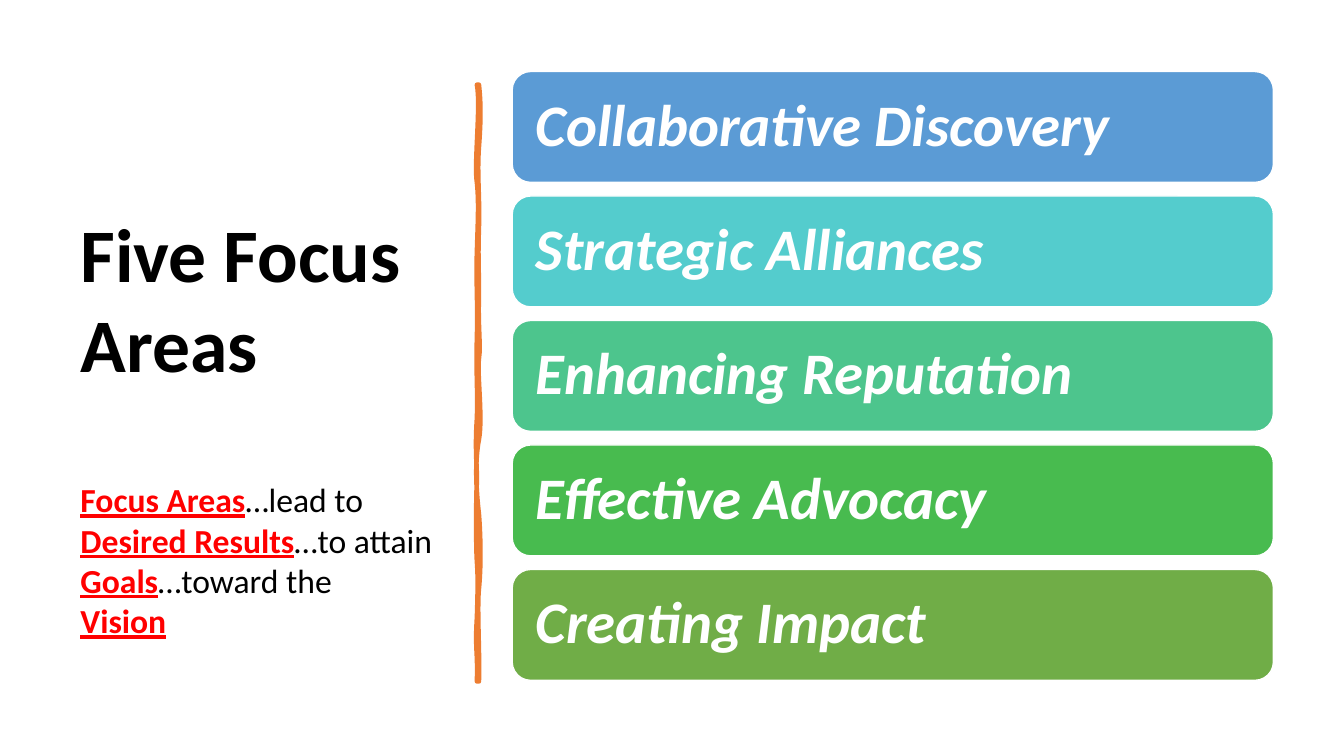
from dataclasses import dataclass

from lxml import etree
from pptx import Presentation
from pptx.dml.color import RGBColor
from pptx.enum.shapes import MSO_SHAPE
from pptx.enum.text import MSO_ANCHOR, PP_ALIGN
from pptx.oxml.ns import qn
from pptx.slide import Slide
from pptx.util import Inches, Pt

ROUNDED = MSO_SHAPE.ROUNDED_RECTANGLE
TOP, MIDDLE = MSO_ANCHOR.TOP, MSO_ANCHOR.MIDDLE
LEFT = PP_ALIGN.LEFT
FONT = "Calibri"
COLORS = {
    "white": "FFFFFF", "black": "000000", "red": "FF0000", "orange": "ED7D31",
    "blue": "5B9BD5", "aqua": "54CCCD", "mint": "4DC58D", "green": "48BB4F",
    "olive": "70AD47",
}
BAR_TOP, BAR_PITCH = 0.71, (5.65 - 0.71) / 4


@dataclass(frozen=True)
class FocusArea:
    name: str
    color: str


@dataclass(frozen=True)
class Phrase:
    term: str
    link: str = ""
    breaks: bool = False


FOCUS_AREAS = (
    FocusArea("Collaborative Discovery", "blue"),
    FocusArea("Strategic Alliances", "aqua"),
    FocusArea("Enhancing Reputation", "mint"),
    FocusArea("Effective Advocacy", "green"),
    FocusArea("Creating Impact", "olive"),
)
PHRASES = (
    Phrase("Focus Areas", "…lead to", True),
    Phrase("Desired Results", "…to attain "),
    Phrase("Goals", "…toward the", True),
    Phrase("Vision"),
)
DIVIDER_START = (4.75, 0.84)
DIVIDER_CURVES = (
    (4.77, 1.02, 4.77, 1.19, 4.75, 1.46), (4.73, 1.73, 4.76, 1.95, 4.75, 2.26),
    (4.74, 2.57, 4.75, 2.62, 4.75, 2.94), (4.74, 3.25, 4.77, 3.42, 4.75, 3.56),
    (4.73, 3.7, 4.79, 4.14, 4.75, 4.36), (4.71, 4.57, 4.72, 4.84, 4.75, 5.1),
    (4.77, 5.36, 4.77, 5.64, 4.75, 5.84), (4.73, 6.03, 4.76, 6.5, 4.75, 6.76),
    (4.74, 6.76, 4.73, 6.76, 4.73, 6.76), (4.74, 6.46, 4.71, 6.44, 4.73, 6.13),
    (4.74, 5.83, 4.74, 5.7, 4.73, 5.57), (4.72, 5.44, 4.72, 4.95, 4.73, 4.77),
    (4.73, 4.59, 4.71, 4.45, 4.73, 4.15), (4.74, 3.86, 4.72, 3.73, 4.73, 3.35),
    (4.74, 2.98, 4.72, 2.81, 4.73, 2.5), (4.74, 2.18, 4.75, 2, 4.73, 1.81),
    (4.7, 1.63, 4.77, 1.04, 4.73, 0.84), (4.74, 0.84, 4.74, 0.84, 4.75, 0.84),
)


def rgb(name: str) -> RGBColor:
    """Return a named colour."""
    return RGBColor.from_string(COLORS[name])


def paint(shape, fill: str, line: str, width: float) -> None:
    """Set fill and outline, without a shadow."""
    shape.shadow.inherit = False
    shape.fill.solid()
    shape.fill.fore_color.rgb = rgb(fill)
    shape.line.color.rgb = rgb(line)
    shape.line.width = Pt(width)


def add_run(paragraph, text: str, size: float, color: str, bold: bool = True,
            italic: bool = False, underline: bool = False) -> None:
    """Append one formatted run."""
    run = paragraph.add_run()
    run.text = text
    run.font.name = FONT
    run.font.size = Pt(size)
    run.font.color.rgb = rgb(color)
    run.font.bold = bold
    run.font.italic = italic
    run.font.underline = underline


def add_heading(slide: Slide) -> None:
    """Add the heading and the sentence below it."""
    box = slide.shapes.add_textbox(Inches(0.7), Inches(0.7), Inches(3.74), Inches(6.11))
    frame = box.text_frame
    frame.word_wrap = True
    frame.vertical_anchor = TOP
    frame.margin_top = Inches(1.35)
    add_run(frame.paragraphs[0], "Five Focus Areas", 54, "black")
    sentence = frame.add_paragraph()
    sentence.space_before = Pt(65)
    for phrase in PHRASES:
        add_run(sentence, phrase.term, 24, "red", underline=True)
        if phrase.link:
            add_run(sentence, phrase.link, 24, "black", bold=False)
        if phrase.breaks:
            sentence.add_line_break()


def add_divider(slide: Slide) -> None:
    """Add the hand-drawn vertical divider as a curved outline."""
    start_x, start_y = DIVIDER_START
    builder = slide.shapes.build_freeform(Inches(start_x), Inches(start_y))
    builder.add_line_segments([(Inches(curve[4]), Inches(curve[5])) for curve in DIVIDER_CURVES])
    divider = builder.convert_to_shape()
    segments = list(divider.element.iter(qn("a:lnTo")))
    for segment, curve in zip(segments, DIVIDER_CURVES):
        bezier = etree.Element(qn("a:cubicBezTo"))
        for x, y in zip(curve[::2], curve[1::2]):
            point = etree.SubElement(bezier, qn("a:pt"))
            point.set("x", str(Inches(x) - divider.left))
            point.set("y", str(Inches(y) - divider.top))
        segment.getparent().replace(segment, bezier)
    paint(divider, "orange", "orange", 3.25)


def add_bar(slide: Slide, index: int, area: FocusArea) -> None:
    """Add one focus area bar."""
    bar = slide.shapes.add_shape(ROUNDED, Inches(5.08), Inches(BAR_TOP + index * BAR_PITCH),
                                 Inches(7.55), Inches(1.1))
    paint(bar, area.color, "white", 1)
    frame = bar.text_frame
    frame.word_wrap = True
    frame.vertical_anchor = MIDDLE
    frame.margin_left = Inches(0.18)
    frame.margin_right = frame.margin_top = frame.margin_bottom = Inches(0.17)
    paragraph = frame.paragraphs[0]
    paragraph.alignment = LEFT
    paragraph.line_spacing = 0.9
    add_run(paragraph, area.name, 42, "white", italic=True)


def main() -> None:
    """Build and save the presentation."""
    presentation = Presentation()
    presentation.slide_width = Inches(13.33)
    presentation.slide_height = Inches(7.5)
    slide = presentation.slides.add_slide(presentation.slide_layouts[6])
    add_heading(slide)
    add_divider(slide)
    for index, area in enumerate(FOCUS_AREAS):
        add_bar(slide, index, area)
    presentation.save("out.pptx")


if __name__ == "__main__":
    main()
